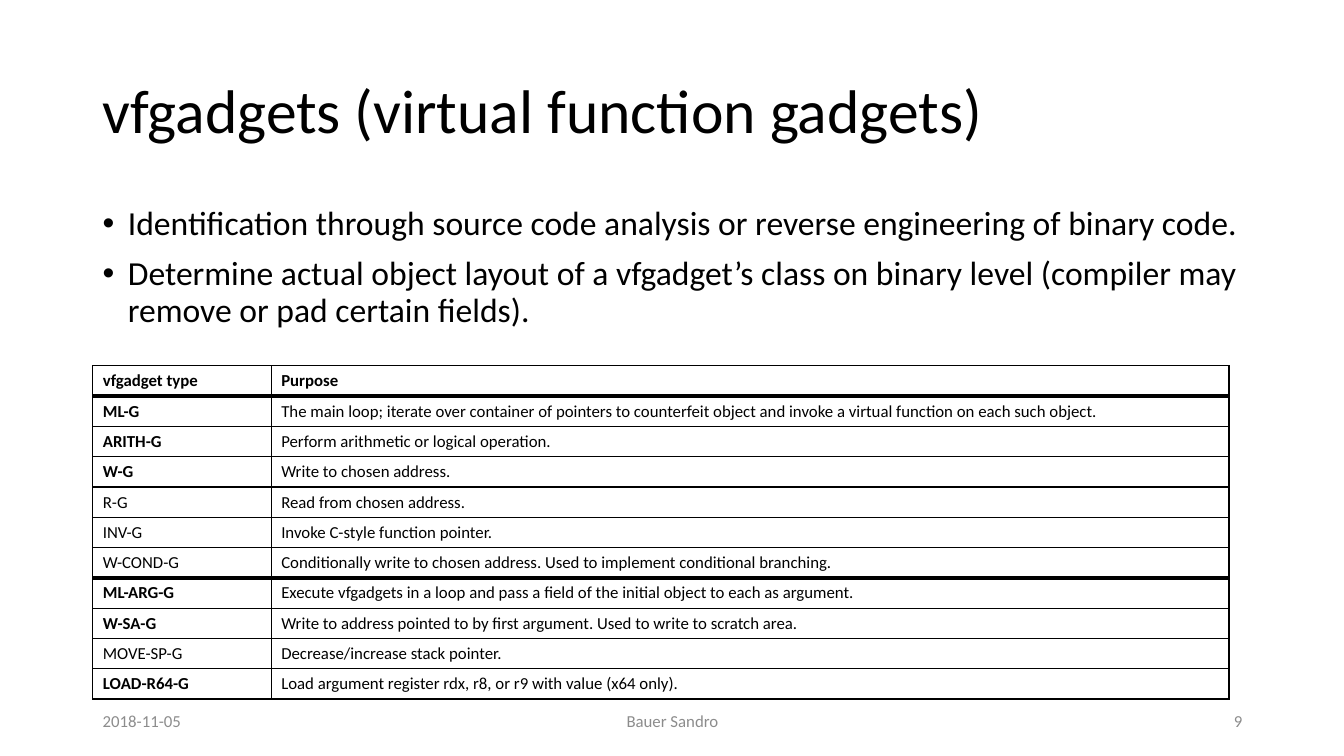
from dataclasses import dataclass

from lxml.etree import SubElement
from pptx import Presentation
from pptx.dml.color import RGBColor
from pptx.enum.text import MSO_ANCHOR, PP_ALIGN
from pptx.oxml.ns import qn
from pptx.slide import Slide
from pptx.table import _Cell
from pptx.text.text import TextFrame, _Paragraph
from pptx.util import Inches, Pt

BLACK = RGBColor(0x00, 0x00, 0x00)
GRAY = RGBColor(0x8C, 0x8C, 0x8C)
WHITE = RGBColor(0xFF, 0xFF, 0xFF)
FONT = "Calibri"
LEFT = 0.92
ROW_HEIGHT = 0.3
COLUMN_WIDTHS = (1.77, 9.5)
THIN, THICK = 1, 3


@dataclass(frozen=True)
class Gadget:
    name: str
    purpose: str
    bold: bool = False
    rule_below: int = THIN


@dataclass(frozen=True)
class FooterItem:
    text: str
    left: float
    width: float
    alignment: PP_ALIGN


TITLE = "vfgadgets (virtual function gadgets)"
BULLETS = (
    "Identification through source code analysis or reverse engineering of binary code.",
    "Determine actual object layout of a vfgadget’s class on binary level "
    "(compiler may remove or pad certain fields).",
)
GADGETS = (
    Gadget("vfgadget type", "Purpose", bold=True, rule_below=THICK),
    Gadget("ML-G", "The main loop; iterate over container of pointers to counterfeit object "
           "and invoke a virtual function on each such object.", bold=True),
    Gadget("ARITH-G", "Perform arithmetic or logical operation.", bold=True),
    Gadget("W-G", "Write to chosen address.", bold=True),
    Gadget("R-G", "Read from chosen address."),
    Gadget("INV-G", "Invoke C-style function pointer."),
    Gadget("W-COND-G", "Conditionally write to chosen address. "
           "Used to implement conditional branching.", rule_below=THICK),
    Gadget("ML-ARG-G", "Execute vfgadgets in a loop and pass a field of the initial object "
           "to each as argument.", bold=True),
    Gadget("W-SA-G", "Write to address pointed to by first argument. "
           "Used to write to scratch area.", bold=True),
    Gadget("MOVE-SP-G", "Decrease/increase stack pointer."),
    Gadget("LOAD-R64-G", "Load argument register rdx, r8, or r9 with value (x64 only).", bold=True),
)
FOOTER = (
    FooterItem("2018-11-05", LEFT, 3, PP_ALIGN.LEFT),
    FooterItem("Bauer Sandro", 4.42, 4.5, PP_ALIGN.CENTER),
    FooterItem("9", 9.42, 3, PP_ALIGN.RIGHT),
)


def write_text(paragraph: _Paragraph, text: str, *, size: float = 12, color: RGBColor = BLACK,
               bold: bool = False, alignment: PP_ALIGN = PP_ALIGN.LEFT,
               line_spacing: float = 1.0, space_before: float = 0) -> None:
    paragraph.alignment = alignment
    paragraph.line_spacing = line_spacing
    paragraph.space_before = Pt(space_before)
    run = paragraph.add_run()
    run.text = text
    run.font.name = FONT
    run.font.size = Pt(size)
    run.font.bold = bold
    run.font.color.rgb = color


def add_text_frame(slide: Slide, left: float, top: float, width: float, height: float,
                   anchor: MSO_ANCHOR) -> TextFrame:
    text_box = slide.shapes.add_textbox(Inches(left), Inches(top), Inches(width), Inches(height))
    text_frame = text_box.text_frame
    text_frame.word_wrap = True
    text_frame.vertical_anchor = anchor
    return text_frame


def add_bullet(paragraph: _Paragraph) -> None:
    properties = paragraph._p.get_or_add_pPr()
    properties.set("marL", str(Inches(0.25)))
    properties.set("indent", str(Inches(-0.25)))
    SubElement(properties, qn("a:buFont"), typeface="Arial")
    SubElement(properties, qn("a:buChar"), char="•")


def set_borders(cell: _Cell, above: int, below: int) -> None:
    properties = cell._tc.get_or_add_tcPr()
    for side, width in (("L", THIN), ("R", THIN), ("T", above), ("B", below)):
        line = SubElement(properties, qn(f"a:ln{side}"), w=str(Pt(width)))
        fill = SubElement(line, qn("a:solidFill"))
        SubElement(fill, qn("a:srgbClr"), val=str(BLACK))


def add_gadget_table(slide: Slide) -> None:
    table = slide.shapes.add_table(
        len(GADGETS), len(COLUMN_WIDTHS), Inches(LEFT), Inches(3.63),
        Inches(sum(COLUMN_WIDTHS)), Inches(ROW_HEIGHT * len(GADGETS))).table
    table.first_row = False
    table.horz_banding = False
    for column, width in zip(table.columns, COLUMN_WIDTHS):
        column.width = Inches(width)
    rule_above = THIN
    for index, gadget in enumerate(GADGETS):
        for column, text in enumerate((gadget.name, gadget.purpose)):
            cell = table.cell(index, column)
            set_borders(cell, rule_above, gadget.rule_below)
            cell.fill.solid()
            cell.fill.fore_color.rgb = WHITE
            bold = gadget.bold and (column == 0 or index == 0)
            write_text(cell.text_frame.paragraphs[0], text, bold=bold)
        rule_above = gadget.rule_below


def main() -> None:
    presentation = Presentation()
    presentation.slide_width = Inches(13.33)
    presentation.slide_height = Inches(7.5)
    slide = presentation.slides.add_slide(presentation.slide_layouts[6])

    title = add_text_frame(slide, LEFT, 0.4, 11.5, 1.45, MSO_ANCHOR.MIDDLE)
    write_text(title.paragraphs[0], TITLE, size=44, line_spacing=0.9)

    body = add_text_frame(slide, LEFT, 2, 11.5, 4.76, MSO_ANCHOR.TOP)
    for index, text in enumerate(BULLETS):
        paragraph = body.add_paragraph() if index else body.paragraphs[0]
        write_text(paragraph, text, size=24, line_spacing=0.9, space_before=10)
        add_bullet(paragraph)

    for item in FOOTER:
        footer = add_text_frame(slide, item.left, 6.95, item.width, 0.4, MSO_ANCHOR.MIDDLE)
        write_text(footer.paragraphs[0], item.text, color=GRAY, alignment=item.alignment)

    add_gadget_table(slide)
    presentation.save("out.pptx")


if __name__ == "__main__":
    main()
